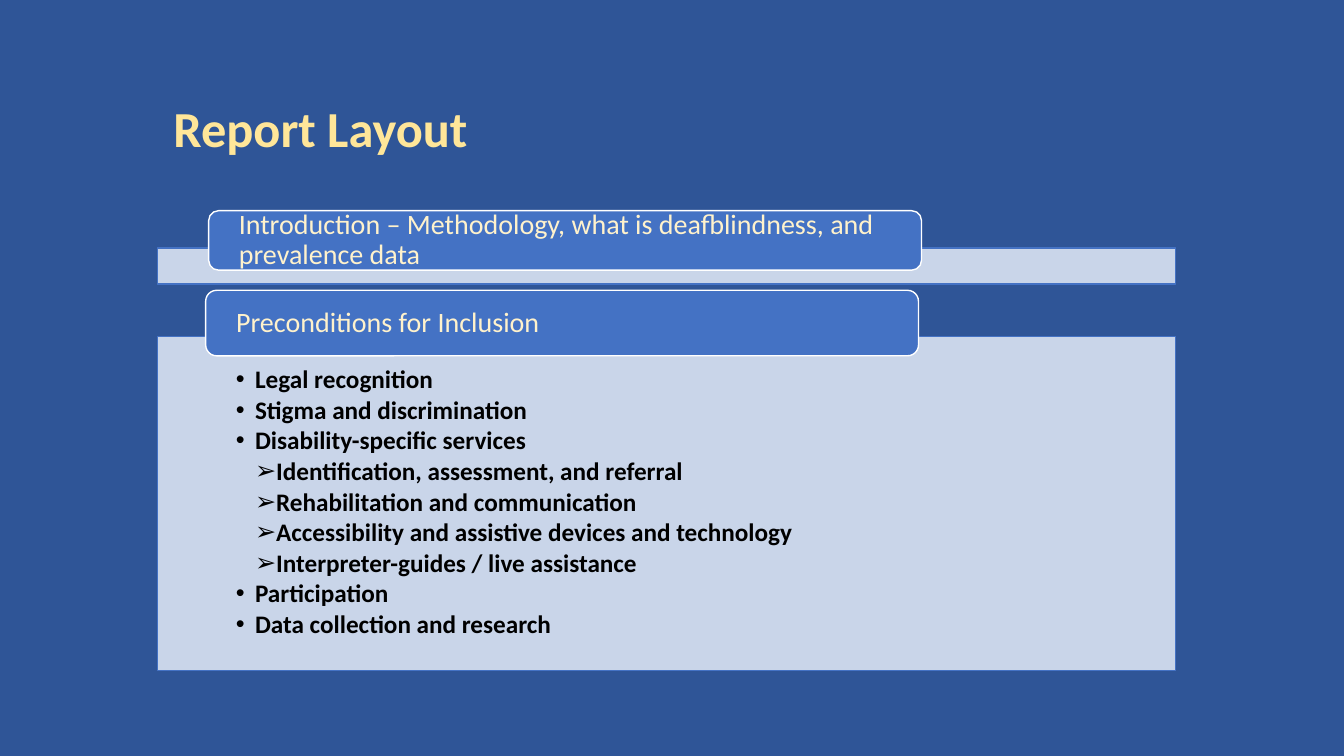
"""Build the Report Layout slide with two headed panels."""
from pptx import Presentation
from pptx.dml.color import RGBColor
from pptx.enum.shapes import MSO_SHAPE as SHAPE
from pptx.enum.text import MSO_ANCHOR as ANCHOR, MSO_AUTO_SIZE as AUTO, PP_ALIGN as ALIGN
from pptx.oxml.ns import qn
from pptx.util import Inches, Pt
from lxml import etree

TITLE = "Report Layout"
HEADERS = [
    ("Introduction – Methodology, what is deafblindness, and prevalence data",
     (2.07, 2.09, 7.07, 0.59)),
    ("Preconditions for Inclusion", (2.04, 2.88, 7.07, 0.65)),
]
TOPICS = [
    (1, "Legal recognition"),
    (1, "Stigma and discrimination"),
    (1, "Disability-specific services"),
    (2, "Identification, assessment, and referral"),
    (2, "Rehabilitation and communication"),
    (2, "Accessibility and assistive devices and technology"),
    (2, "Interpreter-guides / live assistance"),
    (1, "Participation"),
    (1, "Data collection and research"),
]
BULLETS = {1: "•", 2: "➢"}
INDENT = 0.19
TITLE_BOX = (1.62, 0.83, 10.1, 0.94)
INTRO_BAR = (1.56, 2.46, 10.1, 0.36)
TOPIC_PANEL = (1.56, 3.34, 10.1, 3.31)
TITLE_FONT = {"size": Pt(36), "bold": True, "name": "Calibri"}
HEADER_FONT = {"size": Pt(20), "bold": False, "name": "Calibri"}
TOPIC_FONT = {"size": Pt(18), "bold": True, "name": "Calibri"}


def color(target, value):
    target.rgb = RGBColor.from_string(value)


def place(sp, box):
    sp.left, sp.top, sp.width, sp.height = map(Inches, box)


def paint(sp, fill, line, alpha=None):
    sp.fill.solid()
    color(sp.fill.fore_color, fill)
    color(sp.line.color, line)
    sp.line.width = Pt(1)
    if alpha:
        clr = sp.fill._xPr.find(qn("a:solidFill"))[0]
        etree.SubElement(clr, qn("a:alpha"), val=str(alpha * 1000))


def frame(sp, anchor, insets):
    tf = sp.text_frame
    tf.auto_size, tf.word_wrap, tf.vertical_anchor = AUTO.NONE, True, anchor
    for side, inset in zip(("left", "top", "right", "bottom"), insets):
        setattr(tf, f"margin_{side}", Inches(inset))
    return tf


def write(p, text, font, value, after=0):
    p.alignment, p.line_spacing = ALIGN.LEFT, 0.9
    p.space_before, p.space_after = Pt(0), Pt(after)
    r = p.add_run()
    r.text = text
    for key, setting in font.items():
        setattr(r.font, key, setting)
    color(r.font.color, value)


def bullet(p, level):
    p.level = level
    pPr = p._p.get_or_add_pPr()
    pPr.set("marL", str(Inches(INDENT * level)))
    pPr.set("indent", str(-Inches(INDENT)))
    etree.SubElement(pPr, qn("a:buFont"), typeface="Arial")
    etree.SubElement(pPr, qn("a:buChar"), char=BULLETS[level])


def add_box(s, kind, box, fill, line, alpha=None):
    sp = s.shapes.add_shape(kind, *map(Inches, box))
    sp.shadow.inherit = False
    paint(sp, fill, line, alpha)
    return sp


def main():
    prs = Presentation()
    prs.slide_width, prs.slide_height = Inches(13.33), Inches(7.5)
    s = prs.slides.add_slide(prs.slide_layouts[1])
    s.background.fill.solid()
    color(s.background.fill.fore_color, "2F5597")

    title, body = s.shapes.title, s.placeholders[1]
    place(title, TITLE_BOX)
    tf = frame(title, ANCHOR.MIDDLE, (0.1, 0.05, 0.1, 0.05))
    write(tf.paragraphs[0], TITLE, TITLE_FONT, "FFE699")

    place(body, TOPIC_PANEL)
    paint(body, "DAE3F3", "4472C4", 90)
    tf = frame(body, ANCHOR.TOP, (0.78, 0.3, 0.78, 0.14))
    for i, (level, text) in enumerate(TOPICS):
        p = tf.add_paragraph() if i else tf.paragraphs[0]
        write(p, text, TOPIC_FONT, "000000", 2.4)
        bullet(p, level)

    add_box(s, SHAPE.RECTANGLE, INTRO_BAR, "DAE3F3", "4472C4", 90)
    for text, box in HEADERS:
        sp = add_box(s, SHAPE.ROUNDED_RECTANGLE, box, "4472C4", "FFFFFF")
        tf = frame(sp, ANCHOR.MIDDLE, (0.27, 0, 0.27, 0))
        write(tf.paragraphs[0], text, HEADER_FONT, "FFF2CC")

    prs.save("out.pptx")


if __name__ == "__main__":
    main()
